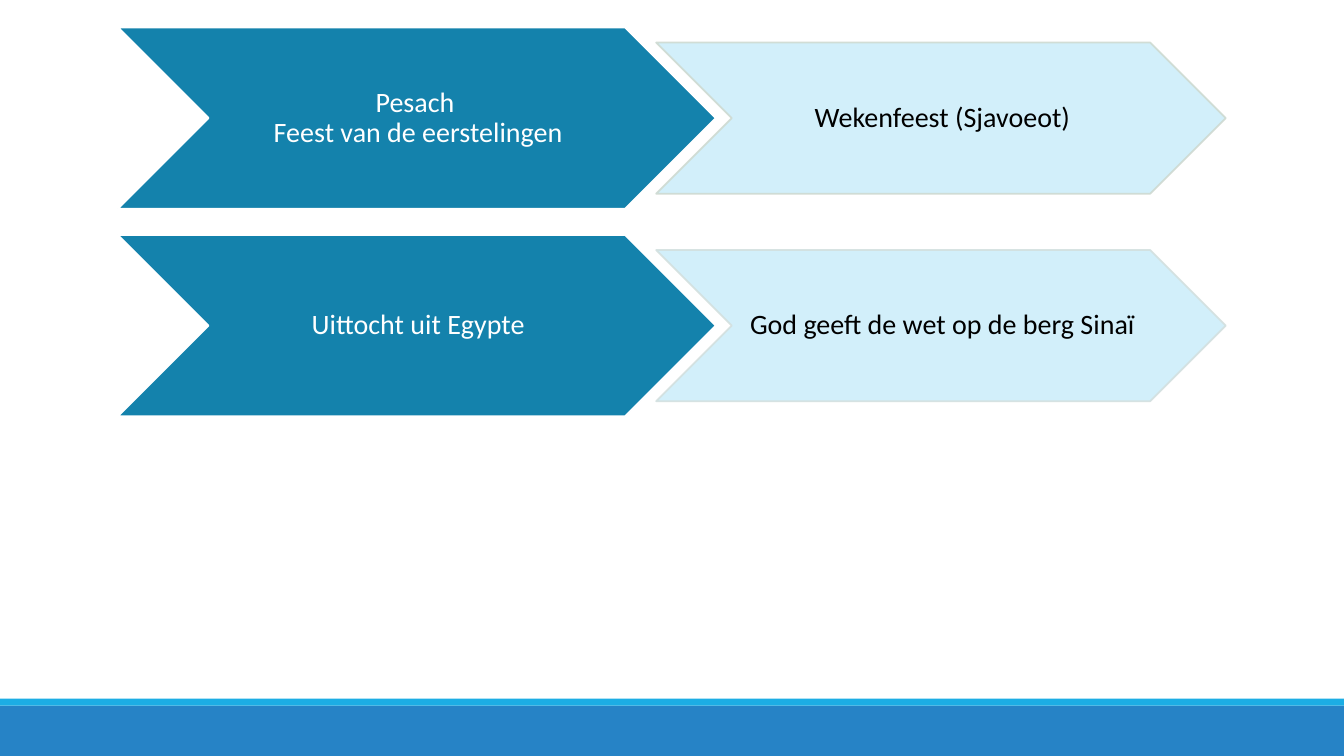
from dataclasses import dataclass

from lxml import etree
from pptx import Presentation
from pptx.dml.color import RGBColor
from pptx.enum.shapes import MSO_SHAPE
from pptx.enum.text import MSO_ANCHOR, PP_ALIGN
from pptx.oxml.ns import qn
from pptx.util import Pt

RECTANGLE = MSO_SHAPE.RECTANGLE
CHEVRON = MSO_SHAPE.CHEVRON
MIDDLE = MSO_ANCHOR.MIDDLE
CENTER = PP_ALIGN.CENTER

# Content: each row holds a feast or event and what follows it, as lists of lines
ROWS = [
    (["Pesach ", "Feest van de eerstelingen"], ["Wekenfeest (Sjavoeot)"]),
    (["Uittocht uit Egypte"], ["God geeft de wet op de berg Sinaï"]),
]


@dataclass(frozen=True)
class Theme:
    font: str = "Calibri"
    text_size: float = 20
    line_spacing: float = 0.9
    outline_width: float = 1.25
    footer: str = "2683C6"
    footer_accent: str = "1CADE4"


@dataclass(frozen=True)
class ChevronStyle:
    left: float
    width: float
    height: float
    fill: str
    text: str
    outlines: tuple  # one colour per row
    outline_opacity: int


THEME = Theme()
STYLES = (
    ChevronStyle(84.24, 426.96, 129.6, "1482AC", "FFFFFF", ("FFFFFF", "FFFFFF"), 100),
    ChevronStyle(468.72, 406.8, 108, "D2EFFA", "000000", ("CEDAD1", "D3E0DF"), 90),
)

# Layout
SLIDE_WIDTH, SLIDE_HEIGHT = 960, 540
FOOTER_HEIGHT, ACCENT_HEIGHT = 36, 5
FIRST_ROW_CENTER, ROW_PITCH = 84.4, 148.2


def add_filled_shape(slide, kind, left, top, width, height, color):
    shape = slide.shapes.add_shape(kind, Pt(left), Pt(top), Pt(width), Pt(height))
    shape.shadow.inherit = False
    shape.fill.solid()
    shape.fill.fore_color.rgb = RGBColor.from_string(color)
    shape.line.fill.background()
    return shape


def set_outline(shape, color, opacity):
    shape.line.width = Pt(THEME.outline_width)
    shape.line.color.rgb = RGBColor.from_string(color)
    if opacity < 100:
        color_element = shape.line._get_or_add_ln().find(".//" + qn("a:srgbClr"))
        etree.SubElement(color_element, qn("a:alpha")).set("val", str(opacity * 1000))


def write_lines(shape, lines, color):
    frame = shape.text_frame
    frame.word_wrap = True
    frame.vertical_anchor = MIDDLE
    frame.margin_left, frame.margin_right = Pt(2), Pt(0)
    frame.margin_top = frame.margin_bottom = Pt(1)
    paragraph = frame.paragraphs[0]
    paragraph.alignment = CENTER
    paragraph.line_spacing = THEME.line_spacing
    for index, line in enumerate(lines):
        if index:
            paragraph.add_line_break()
        run = paragraph.add_run()
        run.text = line
        run.font.name = THEME.font
        run.font.size = Pt(THEME.text_size)
        run.font.color.rgb = RGBColor.from_string(color)


def main():
    presentation = Presentation()
    presentation.slide_width = Pt(SLIDE_WIDTH)
    presentation.slide_height = Pt(SLIDE_HEIGHT)
    slide = presentation.slides.add_slide(presentation.slide_layouts[6])

    # Footer bars
    footer_top = SLIDE_HEIGHT - FOOTER_HEIGHT
    add_filled_shape(slide, RECTANGLE, 0, footer_top, SLIDE_WIDTH, FOOTER_HEIGHT, THEME.footer)
    add_filled_shape(slide, RECTANGLE, 0, footer_top - ACCENT_HEIGHT, SLIDE_WIDTH,
                     ACCENT_HEIGHT, THEME.footer_accent)

    # Chevron rows, each pair centred on the same line
    for row, texts in enumerate(ROWS):
        center = FIRST_ROW_CENTER + row * ROW_PITCH
        for style, lines in zip(STYLES, texts):
            chevron = add_filled_shape(slide, CHEVRON, style.left, center - style.height / 2,
                                       style.width, style.height, style.fill)
            set_outline(chevron, style.outlines[row], style.outline_opacity)
            write_lines(chevron, lines, style.text)

    presentation.save("out.pptx")


if __name__ == "__main__":
    main()
